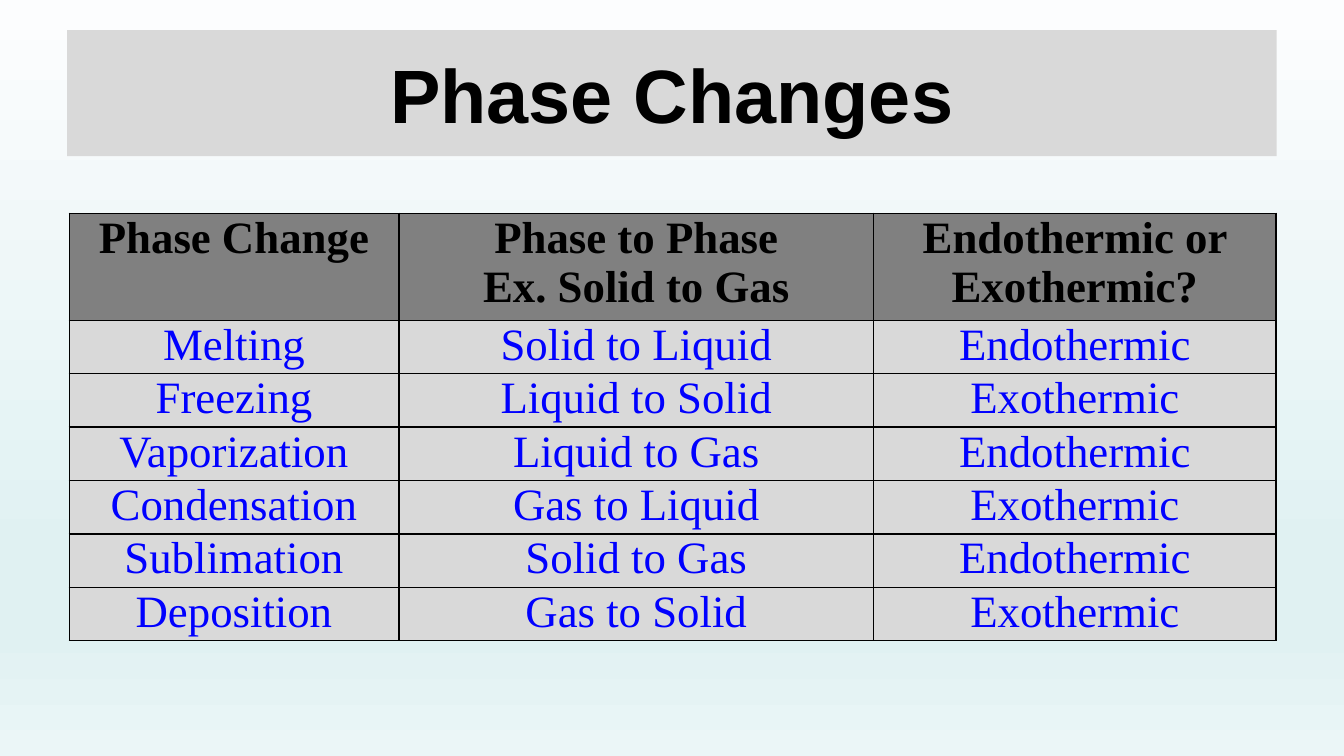
from pptx import Presentation
from pptx.dml.color import RGBColor as RGB
from pptx.enum.shapes import MSO_SHAPE as SHAPE
from pptx.enum.text import MSO_ANCHOR as ANCHOR, PP_ALIGN as ALIGN
from pptx.oxml.ns import qn
from pptx.util import Inches, Pt
from lxml.etree import SubElement as Sub

WIDE, HIGH = Inches(13.33), Inches(7.5)
HUES = {"ink": "000000", "answer": "0000FF", "head": "808080", "panel": "D9D9D9"}
SKY = [(0, "FCFDFE"), (74, "E0F1F2"), (83, "E0F1F2"), (100, "EBF6F7")]

# Text formats
TITLE = {"name": "Arial", "size": Pt(54), "bold": True}
HEAD = {"name": "Times New Roman", "size": Pt(32), "bold": True}
BODY = {**HEAD, "bold": False}

# Boxes in percent of the slide: left, top, width, height
TOP = (5, 4, 90, 16.67)
GRID = (5.15, 28.2, 89.8, 56.6)
COLS = (3.27, 4.71, 3.99)
ROWS = (2, 1, 1, 1, 1, 1, 1)

HEADS = ("Phase Change", "Phase to Phase\nEx. Solid to Gas", "Endothermic or Exothermic?")
PHASES = [
    ("Melting", "Solid to Liquid", "Endothermic"),
    ("Freezing", "Liquid to Solid", "Exothermic"),
    ("Vaporization", "Liquid to Gas", "Endothermic"),
    ("Condensation", "Gas to Liquid", "Exothermic"),
    ("Sublimation", "Solid to Gas", "Endothermic"),
    ("Deposition", "Gas to Solid", "Exothermic"),
]


def place(box):
    return [int(n * full / 100) for n, full in zip(box, (WIDE, HIGH) * 2)]


def paint(part, hue):
    part.fill.solid()
    part.fill.fore_color.rgb = RGB.from_string(HUES[hue])


def write(frame, text, style, hue):
    frame.text = text
    for para in frame.paragraphs:
        para.alignment = ALIGN.CENTER
        for run in para.runs:
            for key, value in style.items():
                setattr(run.font, key, value)
            run.font.color.rgb = RGB.from_string(HUES[hue])


def edge(cell):
    """Draw a thin line on all four sides; lines come before the fill."""
    props = cell._tc.get_or_add_tcPr()
    for side in ("a:lnL", "a:lnR", "a:lnT", "a:lnB"):
        line = Sub(props, qn(side), w=str(Pt(1)))
        Sub(Sub(line, qn("a:solidFill")), qn("a:srgbClr"), val=HUES["ink"])


def backdrop(slide):
    fill = slide.background.fill
    fill.gradient()
    fill.gradient_angle = 270
    stops = next(slide._element.iter(qn("a:gsLst")))
    for old in list(stops):
        stops.remove(old)
    for share, color in SKY:
        stop = Sub(stops, qn("a:gs"), pos=str(share * 1000))
        Sub(stop, qn("a:srgbClr"), val=color)


def banner(slide, box, text):
    bar = slide.shapes.add_shape(SHAPE.RECTANGLE, *place(box))
    bar.shadow.inherit = False
    bar.line.fill.background()
    paint(bar, "panel")
    bar.text_frame.vertical_anchor = ANCHOR.MIDDLE
    write(bar.text_frame, text, TITLE, "ink")


def chart(slide, box, data):
    x, y, w, h = place(box)
    table = slide.shapes.add_table(len(ROWS), len(COLS), x, y, w, h).table
    for col, part in zip(table.columns, COLS):
        col.width = int(w * part / sum(COLS))
    for row, part in zip(table.rows, ROWS):
        row.height = int(h * part / sum(ROWS))

    # Header row first, then the answers
    for r, texts in enumerate(data):
        style, hue, back = (BODY, "answer", "panel") if r else (HEAD, "ink", "head")
        for c, text in enumerate(texts):
            cell = table.cell(r, c)
            cell.margin_left = cell.margin_right = Inches(0.17)
            cell.margin_top = cell.margin_bottom = 0
            edge(cell)
            paint(cell, back)
            write(cell.text_frame, text, style, hue)


def main():
    deck = Presentation()
    deck.slide_width, deck.slide_height = WIDE, HIGH
    slide = deck.slides.add_slide(deck.slide_layouts[6])
    backdrop(slide)
    banner(slide, TOP, "Phase Changes")
    chart(slide, GRID, [HEADS, *PHASES])
    deck.save("out.pptx")


if __name__ == "__main__":
    main()
